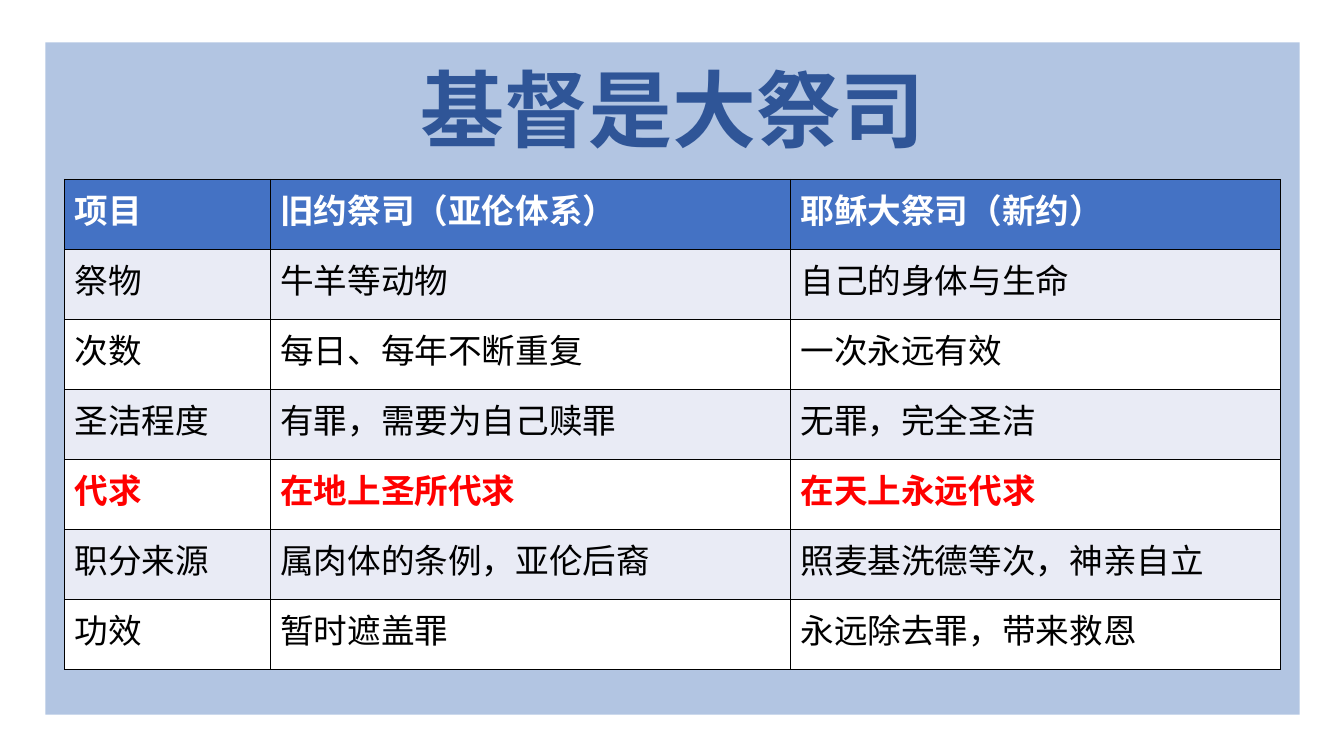
from lxml import etree
from pptx import Presentation
from pptx.dml.color import RGBColor
from pptx.enum.shapes import MSO_SHAPE
from pptx.enum.text import MSO_ANCHOR, PP_ALIGN
from pptx.oxml.ns import qn
from pptx.util import Inches, Pt

RECTANGLE = MSO_SHAPE.RECTANGLE
CENTER = PP_ALIGN.CENTER
BOTTOM = MSO_ANCHOR.BOTTOM

ROWS = [
    ("项目", "旧约祭司（亚伦体系）", "耶稣大祭司（新约）"),
    ("祭物", "牛羊等动物", "自己的身体与生命"),
    ("次数", "每日、每年不断重复", "一次永远有效"),
    ("圣洁程度", "有罪，需要为自己赎罪", "无罪，完全圣洁"),
    ("代求", "在地上圣所代求", "在天上永远代求"),
    ("职分来源", "属肉体的条例，亚伦后裔", "照麦基洗德等次，神亲自立"),
    ("功效", "暂时遮盖罪", "永远除去罪，带来救恩"),
]
COLUMN_WIDTHS = [2.04, 5.16, 4.86]
TABLE_HEIGHT = 4.86
HEADER_ROW, INTERCESSION_ROW = 0, 4


def rgb(hex_color):
    return RGBColor.from_string(hex_color)


def style_paragraph(paragraph, typeface, size, color, bold):
    """Set the font for Latin and East Asian text alike."""
    font = paragraph.font
    font.size = Pt(size)
    font.bold = bold
    font.color.rgb = rgb(color)
    font.name = typeface
    properties = paragraph._p.pPr.find(qn("a:defRPr"))
    etree.SubElement(properties, qn("a:ea"), typeface=typeface)


prs = Presentation()
prs.slide_width = Inches(13.33)
prs.slide_height = Inches(7.5)
slide = prs.slides.add_slide(prs.slide_layouts[5])

# Backing panel, placed behind the title
panel = slide.shapes.add_shape(
    RECTANGLE, Inches(0.45), Inches(0.42), Inches(12.44), Inches(6.67))
panel.shadow.inherit = False
panel.fill.solid()
panel.fill.fore_color.rgb = rgb("B2C5E2")
panel.line.fill.background()
slide.shapes._spTree.insert(2, panel._element)

# Title
title = slide.shapes.title
title.left, title.top = Inches(1.42), Inches(0.57)
title.width, title.height = Inches(10.5), Inches(1.06)
title.text_frame.text = "基督是大祭司"
title.text_frame.vertical_anchor = BOTTOM
heading = title.text_frame.paragraphs[0]
heading.alignment = CENTER
heading.line_spacing = 0.9
style_paragraph(heading, "Noto Sans CJK JP", 60, "2F5597", True)

# Comparison table
comparison = slide.shapes.add_table(
    len(ROWS), len(COLUMN_WIDTHS), Inches(0.64), Inches(1.78),
    Inches(sum(COLUMN_WIDTHS)), Inches(TABLE_HEIGHT)).table
for column, width in zip(comparison.columns, COLUMN_WIDTHS):
    column.width = Inches(width)

for row_index, row_texts in enumerate(ROWS):
    if row_index == HEADER_ROW:
        fill, color = "4472C4", "FFFFFF"
    else:
        fill = "E9EBF5" if row_index % 2 else "FFFFFF"
        color = "FF0000" if row_index == INTERCESSION_ROW else "000000"
    bold = row_index in (HEADER_ROW, INTERCESSION_ROW)

    for column_index, text in enumerate(row_texts):
        cell = comparison.cell(row_index, column_index)
        cell.text = text
        style_paragraph(cell.text_frame.paragraphs[0],
                        "Noto Sans CJK SC", 24, color, bold)
        cell_properties = cell._tc.get_or_add_tcPr()
        for side in ("a:lnL", "a:lnR", "a:lnT", "a:lnB"):
            border = etree.SubElement(cell_properties, qn(side), w=str(Pt(1)))
            border_fill = etree.SubElement(border, qn("a:solidFill"))
            etree.SubElement(border_fill, qn("a:srgbClr"), val="000000")
        cell.fill.solid()
        cell.fill.fore_color.rgb = rgb(fill)

prs.save("out.pptx")
